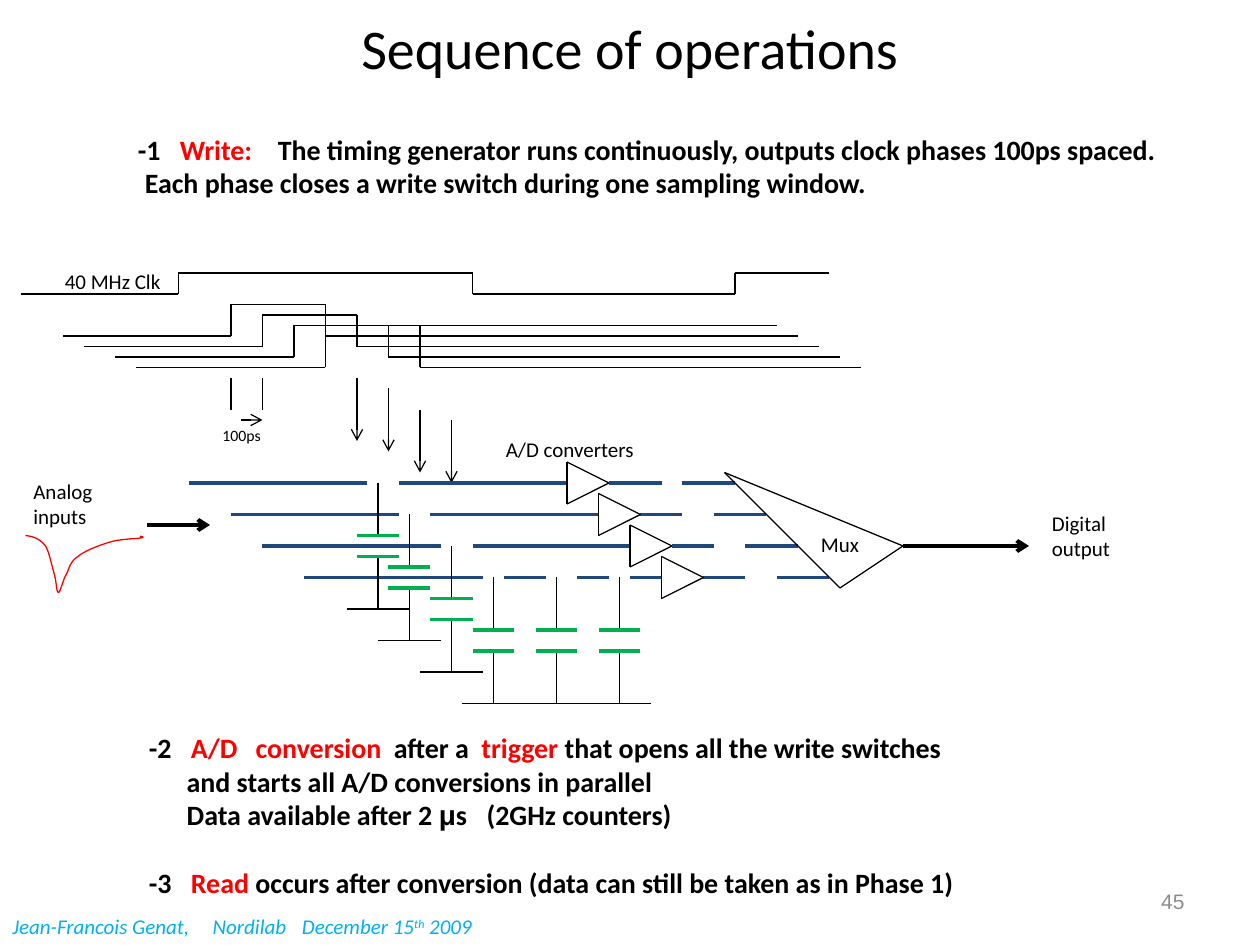
from dataclasses import dataclass
from itertools import pairwise

from pptx import Presentation
from pptx.dml.color import RGBColor as RGB
from pptx.enum.shapes import MSO_CONNECTOR as CONNECTOR
from pptx.enum.text import MSO_ANCHOR as ANCHOR, PP_ALIGN as ALIGN
from pptx.oxml.ns import qn
from pptx.util import Pt
from lxml.etree import SubElement


@dataclass(frozen=True)
class Theme:
    ink: RGB = RGB(0, 0, 0)
    paper: RGB = RGB(255, 255, 255)
    red: RGB = RGB(255, 0, 0)
    green: RGB = RGB(0, 0xB0, 0x50)
    navy: RGB = RGB(0x1F, 0x49, 0x7D)
    sky: RGB = RGB(0, 0xB0, 0xF0)
    gray: RGB = RGB(0x8C, 0x8C, 0x8C)
    font: str = "Calibri"
    number_font: str = "Arial"
    title: int = 32
    body: int = 16
    label: int = 12
    small: int = 9
    thin: float = 0.75
    thick: float = 2.25


THEME = Theme()

WRITE_STEP = [
    ((24, 80), 0, [("-1\t", {}), ("Write:\t", {"color": THEME.red}),
                   ("The timing generator runs continuously, outputs clock phases 100ps spaced.", {})]),
    ((4,), 0, [("\tEach phase closes a write switch during one sampling window.", {})]),
]
READ_STEPS = [
    ((24, 61, 140, 190), 0, [("-2\t", {}), ("A/D\tconversion\t", {"color": THEME.red}), ("after a\t", {}),
                             ("trigger ", {"color": THEME.red}), ("that opens all the write switches", {})]),
    ((21.6,), 0, [("\tand starts all A/D conversions in parallel", {})]),
    ((21.6, 193), 0, [("\tData available after 2 ", {}), ("μ", {"font": THEME.number_font}),
                      ("s\t(2GHz counters)", {})]),
    ((24,), 19.2, [("-3\t", {}), ("Read", {"color": THEME.red}),
                   (" occurs after conversion (data can still be taken as in Phase 1)", {})]),
]
CREDIT = [((114.5, 165.5), 0, [("Jean-Francois Genat,\tNordilab\tDecember 15", {}),
                               ("th", {"raised": True}), (" 2009", {})])]

LABELS = [
    ("Mux", 462, 300, 38, THEME.label),
    ("Digital\noutput", 594, 288, 48, THEME.label),
    ("Analog\ninputs", 12, 270, 49, THEME.label),
    ("A/D converters", 282, 246, 94, THEME.label),
    ("40 MHz Clk", 30, 150, 77, THEME.label),
    ("100ps", 120, 240, 37, THEME.small),
]
CLOCK = [(12, 168), (102, 168), (102, 156), (270, 156), (270, 168), (420, 168), (420, 156), (474, 156)]
ROW_INPUTS = [
    [(108, 210), (228, 324)],
    [(132, 228), (246, 342)],
    [(150, 252), (270, 360)],
    [(174, 276), (288, 312), (330, 348), (360, 378)],
]
CONVERTER_ENDS = [378, 390, 408, 426]
CAPACITORS = [(216, 276), (234, 294), (258, 312), (282, 330), (318, 330), (354, 330)]
PULSE_START = (14.5, 306)
PULSE_CURVES = [
    ((19, 306.5), (23, 308), (26, 312)), ((28, 315), (29.5, 323), (31, 328)),
    ((32.5, 333), (32, 338.5), (33.5, 338.5)), ((34.5, 338.5), (36, 331), (38, 328)),
    ((39.5, 325), (40, 321), (44.5, 318)), ((48, 315), (55.5, 312), (62, 310)),
    ((68, 308), (76, 308), (80, 307.5)), ((83, 307), (81.5, 306.5), (80, 306.5)),
]


def style_run(span, size, color=THEME.ink, font=THEME.font, bold=False, italic=False, raised=False):
    span.font.size, span.font.name = Pt(size), font
    span.font.bold, span.font.italic = bold, italic
    span.font.color.rgb = color
    if raised:
        span.font._element.set("baseline", "30000")


def add_text(page, text, left, top, width, height, size, align=ALIGN.LEFT, **style):
    box = page.shapes.add_textbox(Pt(left), Pt(top), Pt(width), Pt(height))
    box.text_frame.text = text
    for para in box.text_frame.paragraphs:
        para.alignment = align
        for span in para.runs:
            style_run(span, size, **style)
    return box


def add_rich_text(page, paragraphs, left, top, width, height, size, **style):
    box = page.shapes.add_textbox(Pt(left), Pt(top), Pt(width), Pt(height))
    frame = box.text_frame
    frame.word_wrap = True
    for index, (stops, gap, spans) in enumerate(paragraphs):
        para = frame.add_paragraph() if index else frame.paragraphs[0]
        para.space_before = Pt(gap)
        tabs = SubElement(para._p.get_or_add_pPr(), qn("a:tabLst"))
        for stop in stops:
            SubElement(tabs, qn("a:tab"), pos=str(Pt(stop)), algn="l")
        for text, changes in spans:
            span = para.add_run()
            span.text = text
            style_run(span, size, **{**style, **changes})


def add_trace(page, points, color=THEME.ink, weight=THEME.thin, arrow=False):
    for start, end in pairwise(points):
        line = page.shapes.add_connector(CONNECTOR.STRAIGHT, *map(Pt, start + end))
        line.line.color.rgb = color
        line.line.width = Pt(weight)
        if arrow:
            SubElement(line.line._get_or_add_ln(), qn("a:tailEnd"), type="arrow")
        SubElement(line._element.spPr, qn("a:effectLst"))


def add_level(page, left, right, y, **style):
    add_trace(page, [(left, y), (right, y)], **style)


def add_triangle(page, a, b, c):
    add_trace(page, [a, b, c, a])


def add_title(page):
    title = page.shapes.title
    title.left, title.top, title.width, title.height = Pt(36), Pt(0), Pt(648), Pt(54)
    frame = title.text_frame
    frame.text = "Sequence of operations"
    frame.vertical_anchor = ANCHOR.MIDDLE
    frame.paragraphs[0].alignment = ALIGN.CENTER
    style_run(frame.paragraphs[0].runs[0], THEME.title)


def add_timing(page):
    add_trace(page, CLOCK)
    for i, start in enumerate((36, 48, 66, 78)):
        rise, low, high = 132 + 18 * i, 192 + 6 * i, min(174 + 6 * i, 186)
        fall, end = rise + 54, 456 + 12 * i
        add_trace(page, [(start, low), (rise, low), (rise, high), (fall, high), (fall, low), (end, low)])
    add_level(page, 240, 444, 186)
    for x in (132, 150):
        add_trace(page, [(x, 216), (x, 234)])
    add_level(page, 138, 150, 240, arrow=True)
    for x, top in zip((204, 222, 240, 258), (216, 222, 234, 240)):
        add_trace(page, [(x, top), (x, top + 36)], arrow=True)


def add_capacitor(page, x, top):
    upper, lower, ground = top + 30, top + 42, top + 72
    add_trace(page, [(x, top), (x, upper)])
    add_trace(page, [(x, lower), (x, ground)])
    add_level(page, x - 18, x + 18, ground)
    for plate in (upper, lower):
        add_level(page, x - 12, x + 12, plate, color=THEME.green, weight=THEME.thick)


def add_row(page, index, inputs, converter_end):
    shift = 18 * index
    y, base, apex = 276 + shift, 324 + shift, 348 + shift
    for left, right in [*inputs, (apex, converter_end), (390 + shift, 420 + shift)]:
        add_level(page, left, right, y, color=THEME.navy, weight=THEME.thick)
    add_triangle(page, (base, y - 12), (base, y + 12), (apex, y))


def bezier(start, first, second, end, steps=8):
    for t in (step / steps for step in range(1, steps + 1)):
        u = 1 - t
        yield tuple(Pt(u**3 * a + 3 * u * u * t * b + 3 * u * t * t * c + t**3 * d)
                    for a, b, c, d in zip(start, first, second, end))


def add_pulse(page):
    builder = page.shapes.build_freeform(*map(Pt, PULSE_START), scale=1.0)
    start = PULSE_START
    for curve in PULSE_CURVES:
        builder.add_line_segments(list(bezier(start, *curve)), close=False)
        start = curve[-1]
    pulse = builder.convert_to_shape()
    pulse.shadow.inherit = False
    pulse.fill.solid()
    pulse.fill.fore_color.rgb = THEME.paper
    pulse.line.color.rgb = THEME.red
    pulse.line.width = Pt(THEME.thin)


def main():
    deck = Presentation()
    deck.slide_width, deck.slide_height = Pt(720), Pt(540)
    page = deck.slides.add_slide(deck.slide_layouts[5])
    add_title(page)
    add_rich_text(page, WRITE_STEP, 71.7, 72, 604, 46, THEME.body, bold=True)
    add_timing(page)
    for index, (inputs, converter_end) in enumerate(zip(ROW_INPUTS, CONVERTER_ENDS)):
        add_row(page, index, inputs, converter_end)
    for x, top in CAPACITORS:
        add_capacitor(page, x, top)
    add_pulse(page)
    add_triangle(page, (414, 270), (480, 336), (516, 312))
    for left, right, y in [(84, 120, 300), (516, 588, 312)]:
        add_level(page, left, right, y, weight=THEME.thick, arrow=True)
    for text, left, top, width, size in LABELS:
        height = 7.2 + 1.2 * size * len(text.split("\n"))
        add_text(page, text, left, top, width, height, size).text_frame.word_wrap = False
    add_rich_text(page, READ_STEPS, 78, 414, 480, 104, THEME.body, bold=True)
    number = add_text(page, "45", 516, 500.5, 168, 28.75, THEME.label, ALIGN.RIGHT,
                      color=THEME.gray, font=THEME.number_font)
    number.text_frame.vertical_anchor = ANCHOR.MIDDLE
    add_rich_text(page, CREDIT, 0, 518.4, 282, 21.6, THEME.label, color=THEME.sky, italic=True)
    deck.save("out.pptx")


if __name__ == "__main__":
    main()
